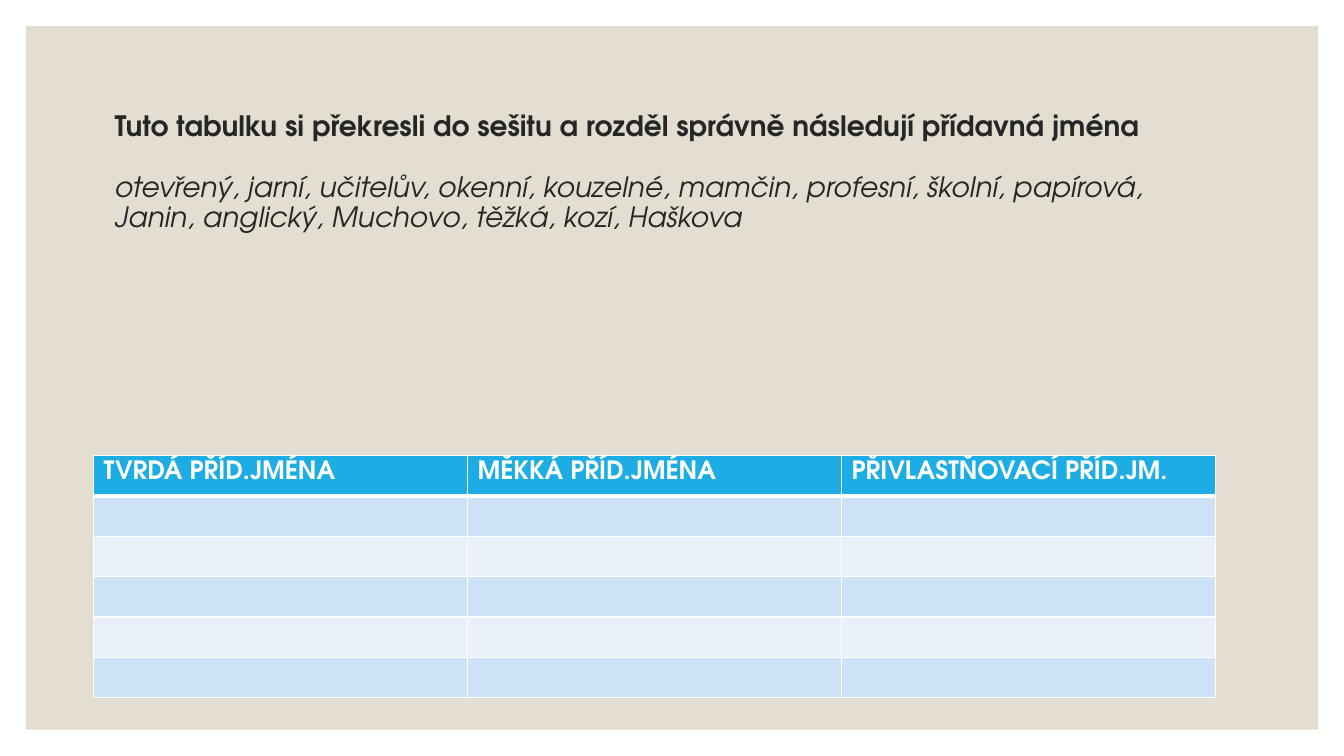
import pptx
import pptx.dml.color
import pptx.enum.shapes
import pptx.enum.text
import pptx.oxml
import pptx.oxml.ns
import pptx.util
from pptx.util import Cm

RGBColor = pptx.dml.color.RGBColor
SAND = RGBColor(0xE3, 0xDE, 0xD1)
INK = RGBColor(0x26, 0x26, 0x26)
WHITE = RGBColor(0xFF, 0xFF, 0xFF)
HEADER_BLUE = RGBColor(0x1C, 0xAD, 0xE4)
BAND_DARK = RGBColor(0xCD, 0xE3, 0xF5)
BAND_LIGHT = RGBColor(0xE8, 0xF1, 0xFA)

FONT = "TeX Gyre Adventor"
TASK = "Tuto tabulku si překresli do sešitu a rozděl správně následují přídavná jména"
ADJECTIVES = (
    "otevřený, jarní, učitelův, okenní, kouzelné, mamčin, profesní, školní, "
    "papírová, Janin, anglický, Muchovo, těžká, kozí, Haškova"
)
HEADINGS = ["TVRDÁ PŘÍD.JMÉNA", "MĚKKÁ PŘÍD.JMÉNA", "PŘIVLASTŇOVACÍ PŘÍD.JM."]
ROW_COUNT = 6


def style_paragraph(paragraph, size, color, bold=False, italic=False):
    font = paragraph.font
    font.name = FONT
    font.size = pptx.util.Pt(size)
    font.color.rgb = color
    font.bold = bold
    font.italic = italic


def add_panel(slide):
    panel = slide.shapes.add_shape(
        pptx.enum.shapes.MSO_SHAPE.RECTANGLE,
        Cm(0.66), Cm(0.66), Cm(32.56), Cm(17.73))
    panel.shadow.inherit = False
    panel.fill.solid()
    panel.fill.fore_color.rgb = SAND
    panel.line.fill.background()


def add_assignment(slide):
    assignment = slide.shapes.add_textbox(Cm(2.64), Cm(1.78), Cm(28.27), Cm(5.16))
    frame = assignment.text_frame
    frame.word_wrap = True
    frame.vertical_anchor = pptx.enum.text.MSO_ANCHOR.MIDDLE
    task = frame.paragraphs[0]
    task.text = TASK
    style_paragraph(task, 20, INK, bold=True)
    adjectives = frame.add_paragraph()
    adjectives.text = ADJECTIVES
    adjectives.space_before = pptx.util.Pt(21.5)
    style_paragraph(adjectives, 20, INK, italic=True)
    for paragraph in frame.paragraphs:
        paragraph.line_spacing = 0.9


def set_border(cell, side, points):
    cell_properties = cell._tc.get_or_add_tcPr()
    cell_properties.append(pptx.oxml.parse_xml(
        f'<a:{side} {pptx.oxml.ns.nsdecls("a")} w="{pptx.util.Pt(points)}">'
        f'<a:solidFill><a:srgbClr val="{WHITE}"/></a:solidFill></a:{side}>'))


def style_cell(cell, row):
    # Borders, thicker under the header row
    set_border(cell, "lnL", 1)
    set_border(cell, "lnR", 1)
    set_border(cell, "lnT", 3 if row == 1 else 1)
    set_border(cell, "lnB", 3 if row == 0 else 1)
    # Header colour, then alternating bands
    cell.fill.solid()
    if row == 0:
        cell.fill.fore_color.rgb = HEADER_BLUE
    else:
        cell.fill.fore_color.rgb = BAND_DARK if row % 2 else BAND_LIGHT
    # Every row takes the same type, so the rows stay equally high
    style_paragraph(cell.text_frame.paragraphs[0], 18, WHITE, bold=row == 0)


def add_sorting_table(slide):
    table = slide.shapes.add_table(
        ROW_COUNT, len(HEADINGS),
        Cm(2.36), Cm(11.48), Cm(28.27), Cm(0.85 * ROW_COUNT)).table
    for column, heading in enumerate(HEADINGS):
        table.cell(0, column).text = heading
        for row in range(ROW_COUNT):
            style_cell(table.cell(row, column), row)


def main():
    presentation = pptx.Presentation()
    presentation.slide_width = Cm(33.87)
    presentation.slide_height = Cm(19.05)
    slide = presentation.slides.add_slide(presentation.slide_layouts[6])
    add_panel(slide)
    add_assignment(slide)
    add_sorting_table(slide)
    presentation.save("out.pptx")


if __name__ == "__main__":
    main()
